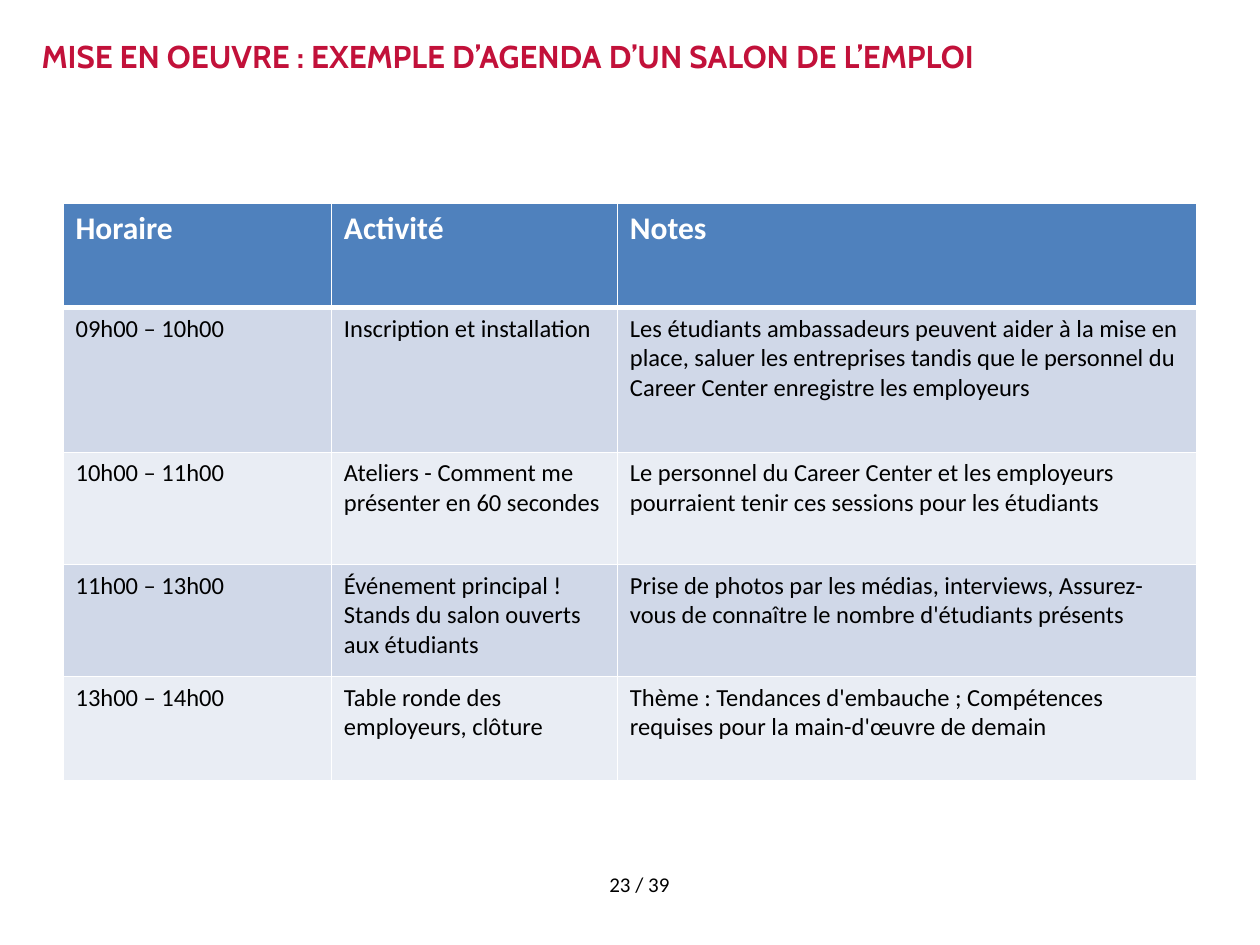
from dataclasses import dataclass

from lxml import etree
from pptx import Presentation
from pptx.dml.color import RGBColor
from pptx.enum.text import MSO_ANCHOR, MSO_AUTO_SIZE, PP_ALIGN
from pptx.oxml.ns import qn
from pptx.util import Inches, Pt

LEFT, CENTER = PP_ALIGN.LEFT, PP_ALIGN.CENTER
TOP = MSO_ANCHOR.TOP
NO_AUTOFIT, GROW = MSO_AUTO_SIZE.NONE, MSO_AUTO_SIZE.SHAPE_TO_FIT_TEXT
TITLE_ONLY = 5


@dataclass(frozen=True)
class TextStyle:
    font: str
    size: float
    color: str
    bold: bool = False


@dataclass(frozen=True)
class Theme:
    title: TextStyle = TextStyle("Cabin", 18, "C2113A", True)
    header: TextStyle = TextStyle("Calibri", 18, "FFFFFF", True)
    body: TextStyle = TextStyle("Calibri", 14, "000000")
    page_number: TextStyle = TextStyle("Calibri", 12, "000000")
    header_fill: str = "4F81BD"
    bands: tuple[str, str] = ("D0D8E8", "E9EDF4")
    border: str = "FFFFFF"
    thin: float = 1
    thick: float = 3


@dataclass(frozen=True)
class Session:
    time: str
    activity: str
    notes: str
    height: float


THEME = Theme()
COLUMN_WIDTHS = (2.13, 2.27, 4.6)
AGENDA = (
    Session("Horaire", "Activité", "Notes", 0.83),
    Session("09h00 – 10h00", "Inscription et installation",
            "Les étudiants ambassadeurs peuvent aider à la mise en place, "
            "saluer les entreprises tandis que le personnel du Career Center "
            "enregistre les employeurs", 1.15),
    Session("10h00 – 11h00", "Ateliers - Comment me présenter en 60 secondes",
            "Le personnel du Career Center et les employeurs pourraient tenir "
            "ces sessions pour les étudiants", 0.89),
    Session("11h00 – 13h00",
            "Événement principal ! Stands du salon ouverts aux étudiants",
            "Prise de photos par les médias, interviews, Assurez-vous de "
            "connaître le nombre d'étudiants présents", 0.89),
    Session("13h00 – 14h00", "Table ronde des employeurs, clôture",
            "Thème : Tendances d'embauche ; Compétences requises pour la "
            "main-d'œuvre de demain", 0.83),
)


def write(frame, text: str, style: TextStyle, align=LEFT) -> None:
    para = frame.paragraphs[0]
    para.alignment = align
    span = para.add_run()
    span.text = text
    span.font.name = style.font
    span.font.size = Pt(style.size)
    span.font.bold = style.bold
    span.font.color.rgb = RGBColor.from_string(style.color)


def place(shape, left: float, top: float, width: float, height: float) -> None:
    shape.left, shape.top = Inches(left), Inches(top)
    shape.width, shape.height = Inches(width), Inches(height)


def set_borders(cell, top: float, bottom: float) -> None:
    properties = cell._tc.get_or_add_tcPr()
    sides = {"a:lnL": THEME.thin, "a:lnR": THEME.thin,
             "a:lnT": top, "a:lnB": bottom}
    for tag, width in sides.items():
        line = etree.SubElement(properties, qn(tag), w=str(Pt(width)))
        fill = etree.SubElement(line, qn("a:solidFill"))
        etree.SubElement(fill, qn("a:srgbClr"), val=THEME.border)


def add_title(page, text: str) -> None:
    title = page.shapes.title
    place(title, 0.33, 0.29, 9.33, 0.76)
    frame = title.text_frame
    frame.auto_size = NO_AUTOFIT
    frame.word_wrap = True
    frame.vertical_anchor = TOP
    frame.margin_left = frame.margin_right = 0
    frame.margin_top = frame.margin_bottom = 0
    write(frame, text, THEME.title)


def add_agenda(page, sessions: tuple[Session, ...]) -> None:
    height = sum(session.height for session in sessions)
    table = page.shapes.add_table(
        len(sessions), len(COLUMN_WIDTHS), Inches(0.5), Inches(1.61),
        Inches(sum(COLUMN_WIDTHS)), Inches(height)).table
    for column, width in zip(table.columns, COLUMN_WIDTHS):
        column.width = Inches(width)
    for index, (row, session) in enumerate(zip(table.rows, sessions)):
        row.height = Inches(session.height)
        is_header = index == 0
        style = THEME.header if is_header else THEME.body
        color = THEME.header_fill if is_header else THEME.bands[(index - 1) % 2]
        # The thick rule lies between the header and the first session
        top = THEME.thick if index == 1 else THEME.thin
        bottom = THEME.thick if is_header else THEME.thin
        texts = (session.time, session.activity, session.notes)
        for cell, text in zip(row.cells, texts):
            set_borders(cell, top, bottom)
            cell.fill.solid()
            cell.fill.fore_color.rgb = RGBColor.from_string(color)
            write(cell.text_frame, text, style)


def add_page_number(page, text: str) -> None:
    box = page.shapes.add_textbox(
        Inches(4.38), Inches(6.87), Inches(1.39), Inches(0.31))
    box.text_frame.word_wrap = True
    box.text_frame.auto_size = GROW
    write(box.text_frame, text, THEME.page_number, CENTER)


def main() -> None:
    deck = Presentation()
    deck.slide_width, deck.slide_height = Inches(10), Inches(7.5)
    page = deck.slides.add_slide(deck.slide_layouts[TITLE_ONLY])
    add_title(page, "MISE EN OEUVRE : EXEMPLE D’AGENDA D’UN SALON DE L’EMPLOI")
    add_agenda(page, AGENDA)
    add_page_number(page, "23 / 39")
    deck.save("out.pptx")


if __name__ == "__main__":
    main()
